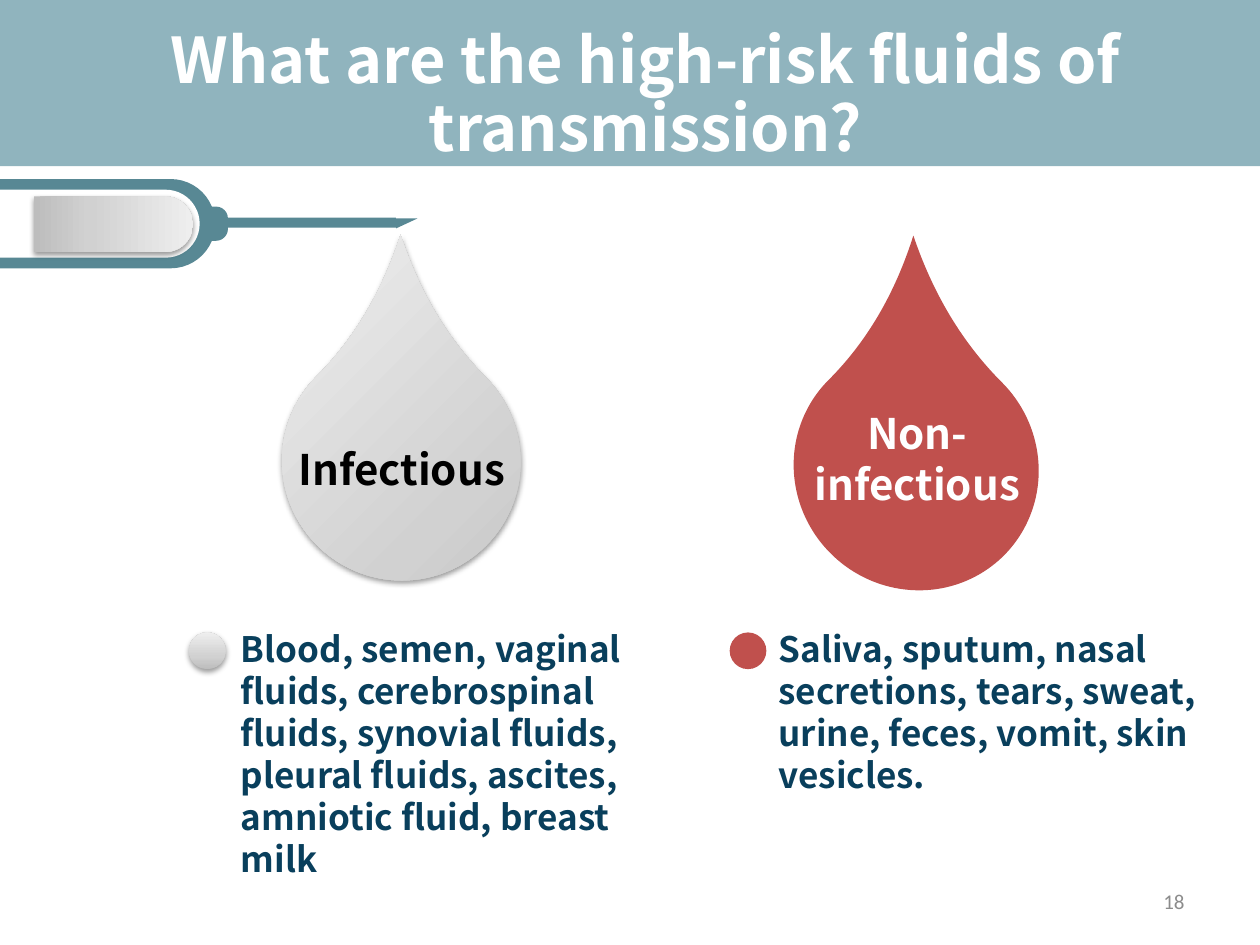
from lxml import etree
from pptx import Presentation
from pptx.dml.color import RGBColor
from pptx.enum import shapes, text
from pptx.oxml import ns
from pptx.util import Cm, Pt

FONT = "Noto Sans CJK SC"
TEAL, RED, WHITE, NAVY, SILVER = "588894", "C0504D", "FFFFFF", "093F5C", "silver"
SILVER_STOPS = [(0, "BDBDBD"), (35, "D1D1D1"), (100, "EEEEEE")]
KIND = shapes.MSO_SHAPE
ALIGN = text.PP_ALIGN

TITLE = "What are the high-risk fluids of transmission?"
# kind, (left, top, width, height) in cm, rotation, fill, adjustment
SYRINGE = [
    (KIND.ROUND_2_SAME_RECTANGLE, (1.27, 2.34, 1.8, 4.34), 90, TEAL, 0.5),
    (KIND.ROUND_2_SAME_RECTANGLE, (1.32, 2.49, 1.37, 4.04), 90, WHITE, 0.5),
    (KIND.ROUND_2_SAME_RECTANGLE, (4.01, 4.27, 0.69, 0.48), 90, TEAL, 0.5),
    (KIND.RECTANGLE, (4.6, 4.39, 3.38, 0.2), 0, TEAL, None),
    (KIND.RIGHT_TRIANGLE, (8.1, 4.29, 0.2, 0.43), 90, TEAL, None),
    (KIND.ROUND_2_SAME_RECTANGLE, (1.73, 2.92, 1.12, 3.2), 90, SILVER, 0.5),
]
GROUPS = [
    dict(label="Infectious", color="000000", fill=SILVER, align=ALIGN.JUSTIFY,
         drop=(5.69, 6.88, 4.8, 4.83), label_box=(5.77, 8.81, 4.88, 1.27),
         dot_left=3.81, body_box=(4.6, 12.52, 9.53, 4.52),
         body="Blood, semen, vaginal fluids, cerebrospinal fluids, synovial fluids, "
              "pleural fluids, ascites, amniotic fluid, breast milk"),
    dict(label="Non-infectious", color=WHITE, fill=RED, align=ALIGN.CENTER,
         drop=(16.03, 6.93, 4.88, 5), label_box=(16.1, 8.1, 4.78, 2.31),
         dot_left=14.71, body_box=(15.44, 12.52, 10.39, 3.68),
         body="Saliva, sputum, nasal secretions, tears, sweat, urine, feces, "
              "vomit, skin vesicles."),
]
DOT_TOP, DOT_SIZE = 12.75, 0.74


def rgb(value):
    return RGBColor.from_string(value)


def add_silver(sp):
    """Give a shape the silver gradient and a soft shadow below it."""
    stops = "".join(f'<a:gs pos="{pos * 1000}"><a:srgbClr val="{color}"/></a:gs>'
                    for pos, color in SILVER_STOPS)
    gradient = (f'<a:gradFill {ns.nsdecls("a")} rotWithShape="1"><a:gsLst>{stops}</a:gsLst>'
                '<a:lin ang="16200000" scaled="1"/></a:gradFill>')
    shadow = (f'<a:effectLst {ns.nsdecls("a")}><a:outerShdw blurRad="39370" dist="20320" '
              'dir="5400000" rotWithShape="0"><a:srgbClr val="000000">'
              '<a:alpha val="38000"/></a:srgbClr></a:outerShdw></a:effectLst>')
    props = sp._element.spPr
    props.find(ns.qn("a:prstGeom")).addnext(etree.fromstring(gradient))
    props.replace(props.find(ns.qn("a:effectLst")), etree.fromstring(shadow))


def add_shape(parent, kind, box, fill, rotation=0, adjustment=None):
    sp = parent.add_shape(kind, *map(Cm, box))
    sp.rotation = rotation
    sp.shadow.inherit = False
    sp.line.fill.background()
    if adjustment is not None:
        sp.adjustments[0] = adjustment
    if fill == SILVER:
        add_silver(sp)
    else:
        sp.fill.solid()
        sp.fill.fore_color.rgb = rgb(fill)
    return sp


def set_text(sp, box, words, size, color, align, font=FONT, bold=True,
             anchor=text.MSO_ANCHOR.TOP):
    """Place a text shape and fill it with one formatted paragraph."""
    sp.left, sp.top, sp.width, sp.height = map(Cm, box)
    tf = sp.text_frame
    tf.text = words
    tf.word_wrap = True
    tf.auto_size = text.MSO_AUTO_SIZE.NONE
    tf.vertical_anchor = anchor
    p = tf.paragraphs[0]
    p.alignment = align
    p.space_before = Pt(0)
    f = p.runs[0].font
    f.name, f.size, f.bold, f.color.rgb = font, Pt(size), bold, rgb(color)
    return p


def remove_bullet(p):
    props = p._p.get_or_add_pPr()
    props.set("marL", "0")
    props.set("indent", "0")
    etree.SubElement(props, ns.qn("a:buNone"))


def add_text(s, box, *args, **kwargs):
    return set_text(s.shapes.add_textbox(*map(Cm, box)), box, *args, **kwargs)


def main():
    prs = Presentation()
    prs.slide_width, prs.slide_height = Cm(25.4), Cm(19.05)
    s = prs.slides.add_slide(prs.slide_layouts.get_by_name("Two Content"))

    band = add_shape(s.shapes, KIND.RECTANGLE, (0, 0, 25.4, 3.35), "90B4BE")
    s.shapes._spTree.insert(2, band._element)  # behind the title
    p = set_text(s.shapes.title, (0.36, 0.36, 25.3, 3.18), TITLE, 36, WHITE,
                 ALIGN.CENTER, anchor=text.MSO_ANCHOR.MIDDLE)
    p.line_spacing = 0.9

    syringe = s.shapes.add_group_shape()
    for kind, box, rotation, fill, adjustment in SYRINGE:
        add_shape(syringe.shapes, kind, box, fill, rotation, adjustment)

    for idx, g in enumerate(GROUPS, start=1):
        add_shape(s.shapes, KIND.TEAR, g["drop"], g["fill"], 315, 1.34)
        add_text(s, g["label_box"], g["label"], 24, g["color"], g["align"])
        add_shape(s.shapes, KIND.OVAL, (g["dot_left"], DOT_TOP, DOT_SIZE, DOT_SIZE), g["fill"])
        p = set_text(s.placeholders[idx], g["body_box"], g["body"], 20, NAVY, ALIGN.LEFT)
        remove_bullet(p)

    add_text(s, (18.21, 17.65, 5.92, 1.02), "18", 12, "8C8C8C", ALIGN.RIGHT,
             font="Calibri", bold=False, anchor=text.MSO_ANCHOR.MIDDLE)
    prs.save("out.pptx")


if __name__ == "__main__":
    main()
